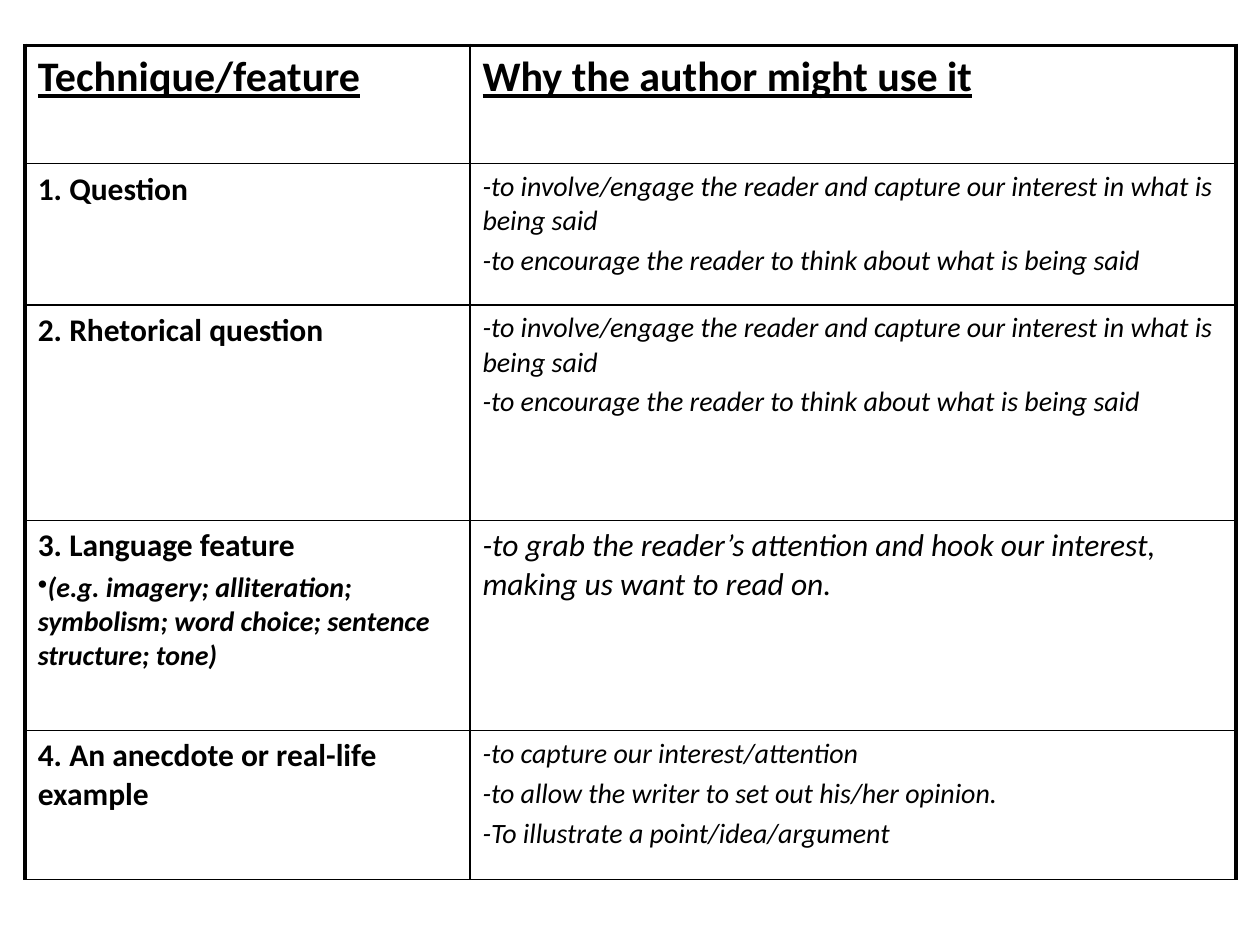
import pptx
import pptx.dml.color
import pptx.oxml
import pptx.oxml.ns
import pptx.util

# Content: each cell is a list of (style, text) paragraphs
ENGAGE = [
    ("reason", "-to involve/engage the reader and capture our interest in what is being said"),
    ("reason", "-to encourage the reader to think about what is being said"),
]
ROWS = [
    ([("heading", "Technique/feature")], [("heading", "Why the author might use it")]),
    ([("technique", "1. Question")], ENGAGE),
    ([("technique", "2. Rhetorical question")], ENGAGE),
    (
        [("technique", "3. Language feature"),
         ("examples", "(e.g. imagery; alliteration; symbolism; word choice; "
                      "sentence structure; tone)")],
        [("large_reason", "-to grab the reader’s attention and hook our interest, "
                          "making us want to read on.")],
    ),
    (
        [("technique", "4. An anecdote or real-life example")],
        [("reason", "-to capture our interest/attention"),
         ("reason", "-to allow the writer to set out his/her opinion."),
         ("reason", "-To illustrate a point/idea/argument")],
    ),
]

THEME = {
    "font": "Calibri",
    "ink": "000000",
    "thin": 1,
    "thick": 2.25,
    "space_share": 0.2,
    "styles": {
        "heading": {"size": 24, "bold": True, "italic": False, "underline": True},
        "technique": {"size": 18, "bold": True, "italic": False, "underline": False},
        "examples": {"size": 16, "bold": True, "italic": True, "underline": False},
        "reason": {"size": 16, "bold": False, "italic": True, "underline": False},
        "large_reason": {"size": 18, "bold": False, "italic": True, "underline": False},
    },
}

# Grid, in inches
SLIDE_SIZE = (10, 7.5)
TABLE_ORIGIN = (0.2, 0.36)
COLUMN_WIDTHS = [3.53, 6.08]
ROW_HEIGHTS = [0.94, 1.12, 1.71, 1.67, 1.18]


def add_border(cell, side, width):
    line = pptx.oxml.parse_xml(
        f'<a:ln{side} {pptx.oxml.ns.nsdecls("a")} w="{pptx.util.Pt(width)}">'
        f'<a:solidFill><a:srgbClr val="{THEME["ink"]}"/></a:solidFill>'
        f'<a:prstDash val="solid"/></a:ln{side}>'
    )
    cell._tc.get_or_add_tcPr().append(line)


def write_paragraph(paragraph, style, text):
    run = paragraph.add_run()
    run.text = text
    values = dict(THEME["styles"][style], name=THEME["font"])
    size = values["size"]
    values["size"] = pptx.util.Pt(size)
    for attribute, value in values.items():
        setattr(run.font, attribute, value)
    run.font.color.rgb = pptx.dml.color.RGBColor.from_string(THEME["ink"])
    paragraph.space_before = pptx.util.Pt(size * THEME["space_share"])
    if style == "examples":
        bullet = f'<a:buChar {pptx.oxml.ns.nsdecls("a")} char="•"/>'
        paragraph._p.get_or_add_pPr().append(pptx.oxml.parse_xml(bullet))


def fill_cell(cell, paragraphs, outer_sides):
    for side in "LRTB":
        add_border(cell, side, THEME["thick" if side in outer_sides else "thin"])
    cell.fill.background()
    frame = cell.text_frame
    for index, (style, text) in enumerate(paragraphs):
        paragraph = frame.add_paragraph() if index else frame.paragraphs[0]
        write_paragraph(paragraph, style, text)


def main():
    presentation = pptx.Presentation()
    presentation.slide_width, presentation.slide_height = map(pptx.util.Inches, SLIDE_SIZE)
    slide = presentation.slides.add_slide(presentation.slide_layouts[6])

    # Table frame
    extent = (*TABLE_ORIGIN, sum(COLUMN_WIDTHS), sum(ROW_HEIGHTS))
    table = slide.shapes.add_table(
        len(ROWS), len(COLUMN_WIDTHS), *map(pptx.util.Inches, extent)
    ).table
    table.first_row = table.horz_banding = False
    for column, width in zip(table.columns, COLUMN_WIDTHS):
        column.width = pptx.util.Inches(width)
    for row, height in zip(table.rows, ROW_HEIGHTS):
        row.height = pptx.util.Inches(height)

    # Cells: thick lines on the left, right and top edges
    for row_index, row in enumerate(ROWS):
        for column_index, paragraphs in enumerate(row):
            outer_sides = "LR"[column_index] + ("T" if row_index == 0 else "")
            fill_cell(table.cell(row_index, column_index), paragraphs, outer_sides)

    presentation.save("out.pptx")


if __name__ == "__main__":
    main()
